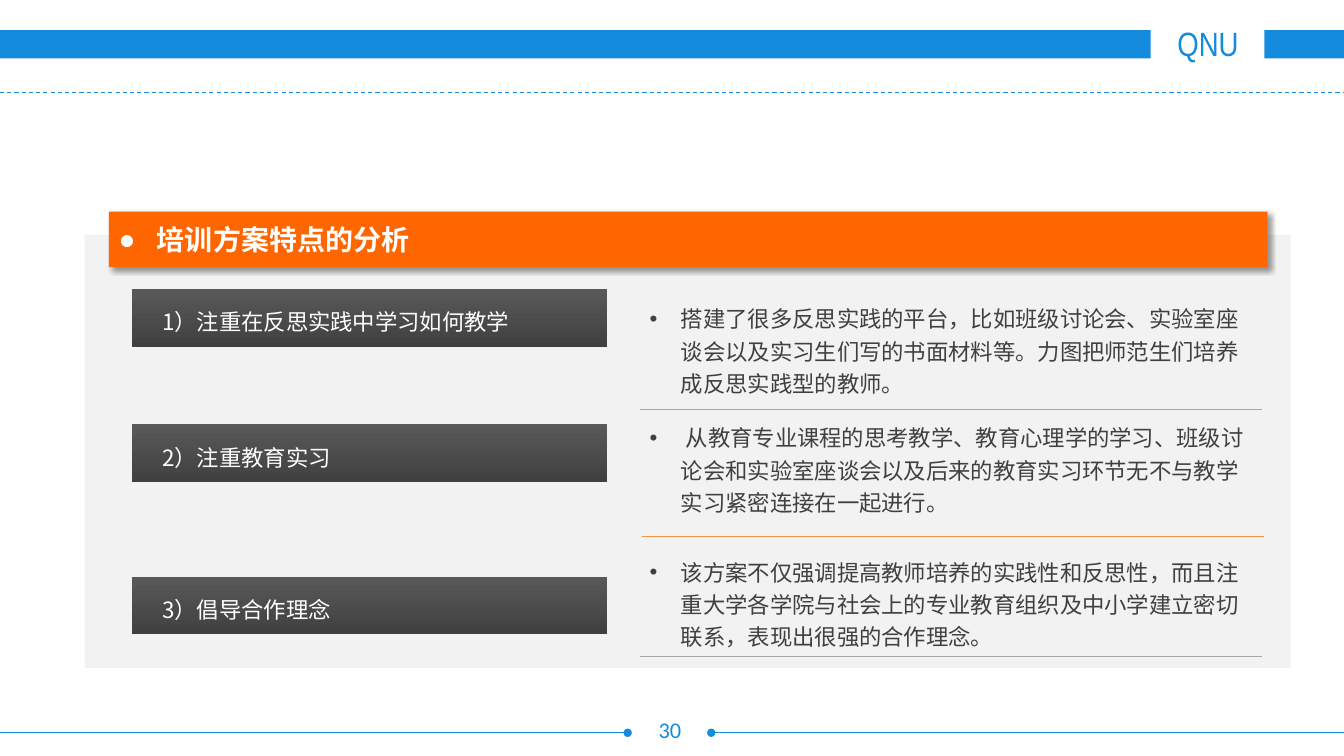
from dataclasses import dataclass

from lxml.etree import SubElement
from pptx import Presentation
from pptx.dml.color import RGBColor as RGB
from pptx.enum.shapes import MSO_CONNECTOR as CONN, MSO_SHAPE as SHAPE
from pptx.enum.dml import MSO_LINE as DASH
from pptx.enum.text import MSO_ANCHOR as ANCHOR, PP_ALIGN as ALIGN
from pptx.oxml.ns import qn
from pptx.util import Inches, Pt


@dataclass(frozen=True)
class Theme:
    blue: str = "148BDC"
    orange: str = "FF6600"
    amber: str = "F69240"
    panel: str = "F2F2F2"
    rule: str = "A6A6A6"
    dark: str = "404040"
    grey: str = "595959"
    white: str = "FFFFFF"
    black: str = "000000"
    sans: str = "Noto Sans CJK SC"
    latin: str = "Calibri"
    narrow: str = "Arial Narrow"
    body: int = 16
    title: int = 20
    brand: int = 24


T = Theme()

FEATURES = [
    (2.87, 2.93, "1）注重在反思实践中学习如何教学",
     "搭建了很多反思实践的平台，比如班级讨论会、实验室座谈会以及实习生们写的书面材料等。"
     "力图把师范生们培养成反思实践型的教师。"),
    (4.21, 4.11, "2）注重教育实习",
     " 从教育专业课程的思考教学、教育心理学的学习、班级讨论会和实验室座谈会"
     "以及后来的教育实习环节无不与教学实习紧密连接在一起进行。"),
    (5.72, 5.44, "3）倡导合作理念",
     "该方案不仅强调提高教师培养的实践性和反思性，而且注重大学各学院与社会上的专业教育组织"
     "及中小学建立密切联系，表现出很强的合作理念。"),
]
DIVIDERS = [(6.35, 4.06, T.rule), (6.37, 5.32, T.amber), (6.35, 6.51, T.rule)]


def add_rect(slide, x, y, w, h, color):
    sp = slide.shapes.add_shape(SHAPE.RECTANGLE, Inches(x), Inches(y), Inches(w), Inches(h))
    sp.shadow.inherit = False
    sp.fill.solid()
    sp.fill.fore_color.rgb = RGB.from_string(color)
    sp.line.fill.background()
    return sp


def add_shadow(sp):
    effects = sp.element.spPr.find(qn("a:effectLst"))
    shadow = SubElement(effects, qn("a:outerShdw"), blurRad=str(Pt(4)), dist=str(Pt(3)),
                        dir="2700000", algn="tl", rotWithShape="0")
    color = SubElement(shadow, qn("a:srgbClr"), val=T.black)
    SubElement(color, qn("a:alpha"), val="40000")


def add_line(slide, x1, x2, y, color, dash=None, end=None):
    line = slide.shapes.add_connector(CONN.STRAIGHT, Inches(x1), Inches(y), Inches(x2), Inches(y))
    line.line.color.rgb = RGB.from_string(color)
    line.line.width = Pt(0.75)
    if dash:
        line.line.dash_style = dash
    if end:
        SubElement(line.line._get_or_add_ln(), qn(f"a:{end}"), type="oval")
    SubElement(line.element.spPr, qn("a:effectLst"))


def write(tf, text, size, color, font, bold=False, align=ALIGN.LEFT, spacing=None):
    tf.word_wrap = True
    tf.text = text
    p = tf.paragraphs[0]
    p.alignment = align
    if spacing:
        p.line_spacing = spacing
    r = p.runs[0]
    r.font.size = Pt(size)
    r.font.bold = bold
    r.font.name = font
    r.font.color.rgb = RGB.from_string(color)
    SubElement(r.font._element, qn("a:ea"), typeface=T.sans)
    return p


def add_text(slide, x, y, w, h, *args, **kwargs):
    box = slide.shapes.add_textbox(Inches(x), Inches(y), Inches(w), Inches(h))
    return write(box.text_frame, *args, **kwargs)


def add_bullet(p, char, indent):
    pPr = p._p.get_or_add_pPr()
    pPr.set("marL", str(Inches(indent)))
    pPr.set("indent", str(-Inches(indent)))
    SubElement(pPr, qn("a:buFont"), typeface="Arial")
    SubElement(pPr, qn("a:buChar"), char=char)


def add_label(slide, y, text):
    sp = add_rect(slide, 1.31, y, 4.72, 0.57, T.dark)
    sp.fill.gradient()
    sp.fill.gradient_angle = 90
    for stop, color in zip(sp.fill.gradient_stops, (T.dark, T.grey)):
        stop.color.rgb = RGB.from_string(color)
    tf = sp.text_frame
    tf.margin_left = Inches(0.3)
    tf.vertical_anchor = ANCHOR.MIDDLE
    write(tf, text, T.body, T.white, T.sans, spacing=1.3)


def add_frame(slide):
    add_line(slide, 0, 13.34, 0.92, T.blue, dash=DASH.DASH)
    add_rect(slide, 0, 0.3, 11.42, 0.28, T.blue)
    add_rect(slide, 12.55, 0.3, 0.79, 0.28, T.blue)
    add_text(slide, 11.42, 0.18, 1.14, 0.52, "QNU", T.brand, T.blue, T.narrow, align=ALIGN.CENTER)
    add_line(slide, 0, 6.23, 7.27, T.blue, end="tailEnd")
    add_line(slide, 7.06, 13.34, 7.27, T.blue, end="headEnd")
    add_text(slide, 6.23, 7.06, 0.84, 0.37, "30", T.body, T.blue, T.latin, align=ALIGN.CENTER)


def add_heading(slide):
    add_rect(slide, 0.84, 2.33, 11.97, 4.3, T.panel)
    add_shadow(add_rect(slide, 1.08, 2.1, 11.5, 0.55, T.orange))
    p = add_text(slide, 1.08, 2.16, 6.85, 0.44, "培训方案特点的分析",
                 T.title, T.white, T.latin, bold=True)
    add_bullet(p, "●", 0.38)


def main():
    prs = Presentation()
    prs.slide_width, prs.slide_height = Inches(13.34), Inches(7.5)
    slide = prs.slides.add_slide(prs.slide_layouts[6])
    add_frame(slide)
    add_heading(slide)
    for label_y, text_y, label, text in FEATURES:
        add_label(slide, label_y, label)
        p = add_text(slide, 6.35, text_y, 6.22, 1.07, text, T.body, T.dark, T.sans, spacing=1.2)
        add_bullet(p, "•", 0.31)
    for x, y, color in DIVIDERS:
        add_line(slide, x, x + 6.18, y, color)
    prs.save("out.pptx")


if __name__ == "__main__":
    main()
